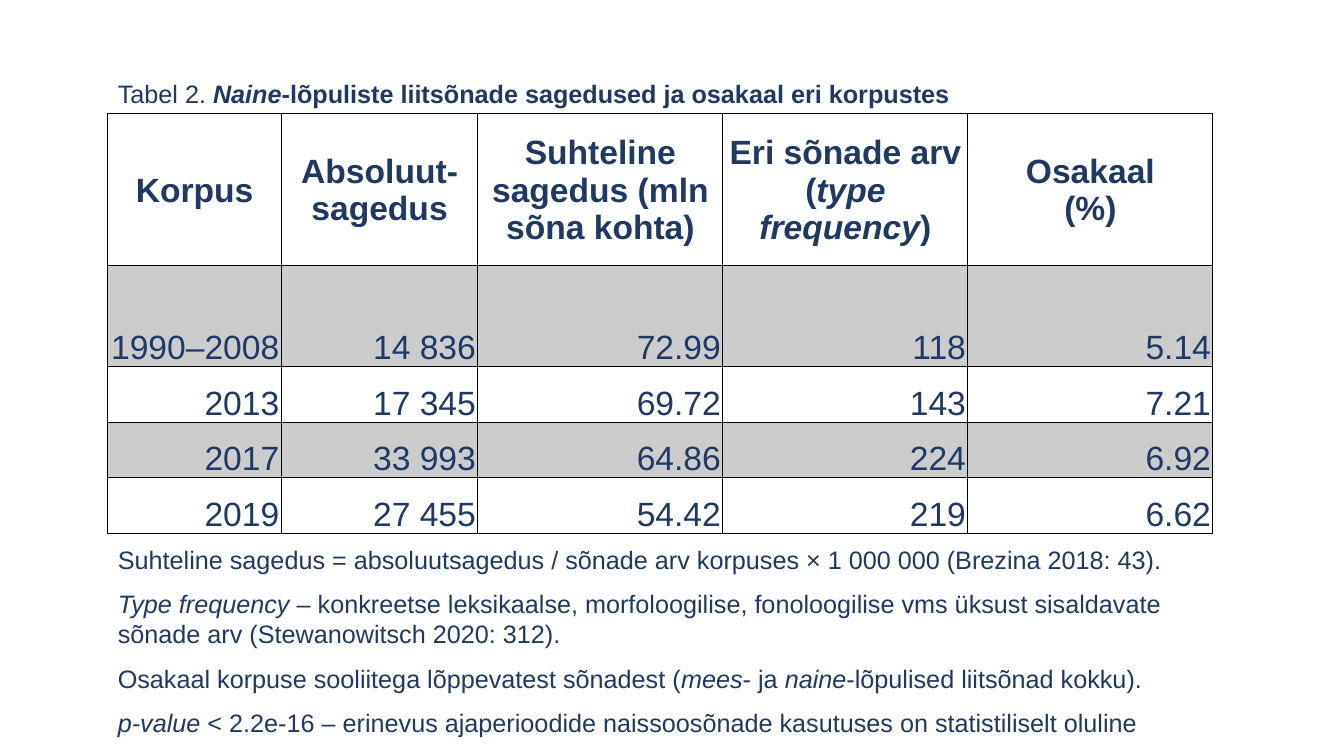
import pptx
import pptx.util
import pptx.dml.color
import pptx.enum.text
import pptx.oxml
import pptx.oxml.ns

Inches = pptx.util.Inches
Pt = pptx.util.Pt
ALIGN = pptx.enum.text.PP_ALIGN
ANCHOR = pptx.enum.text.MSO_ANCHOR

NAVY = pptx.dml.color.RGBColor(0x20, 0x38, 0x64)
BLACK = pptx.dml.color.RGBColor(0, 0, 0)
FONT = "Arial"
BAND_OPACITY = 20000  # thousandths of a percent

# A paragraph is a list of (text, style) runs; style letters are b and i
CAPTION = [[("Tabel 2. ", ""), ("Naine", "bi"),
            ("-lõpuliste liitsõnade sagedused ja osakaal eri korpustes", "b")]]

HEADERS = [
    [[("Korpus", "b")]],
    [[("Absoluut-", "b")], [("sagedus", "b")]],
    [[("Suhteline sagedus (mln sõna kohta)", "b")]],
    [[("Eri sõnade arv", "b")],
     [("(", "b"), ("type frequency", "bi"), (")", "b")]],
    [[("Osakaal", "b")], [("(%)", "b")]],
]
DATA = [
    ["1990–2008", "14 836", "72.99", "118", "5.14"],
    ["2013", "17 345", "69.72", "143", "7.21"],
    ["2017", "33 993", "64.86", "224", "6.92"],
    ["2019", "27 455", "54.42", "219", "6.62"],
]
COL_WIDTHS = [1.72, 1.95, 2.43, 2.43, 2.43]
ROW_HEIGHTS = [1.5, 1.01, 0.55, 0.55, 0.55]

NOTES = [
    [("Suhteline sagedus = absoluutsagedus / sõnade arv korpuses × 1 000 000 "
      "(Brezina 2018: 43).", "")],
    [("Type frequency ", "i"),
     ("– konkreetse leksikaalse, morfoloogilise, fonoloogilise vms üksust "
      "sisaldavate sõnade arv (Stewanowitsch 2020: 312).", "")],
    [("Osakaal korpuse sooliitega lõppevatest sõnadest (", ""), ("mees", "i"),
     ("- ja ", ""), ("naine", "i"), ("-lõpulised liitsõnad kokku).", "")],
    [("p-value", "i"),
     (" < 2.2e-16 – erinevus ajaperioodide naissoosõnade kasutuses on "
      "statistiliselt oluline", "")],
]


def write_paragraphs(tf, paragraphs, size, align=ALIGN.LEFT, gap=0):
    for i, runs in enumerate(paragraphs):
        p = tf.add_paragraph() if i else tf.paragraphs[0]
        p.alignment = align
        if gap and i < len(paragraphs) - 1:
            p.space_after = Pt(gap)
        for text, style in runs:
            r = p.add_run()
            r.text = text
            r.font.name = FONT
            r.font.size = Pt(size)
            r.font.color.rgb = NAVY
            r.font.bold = "b" in style
            r.font.italic = "i" in style


def add_text(s, left, top, width, height, paragraphs, gap=0):
    box = s.shapes.add_textbox(Inches(left), Inches(top),
                               Inches(width), Inches(height))
    tf = box.text_frame
    tf.word_wrap = True
    write_paragraphs(tf, paragraphs, 18, gap=gap)


def add_borders(cell):
    tc_pr = cell._tc.get_or_add_tcPr()
    for i, side in enumerate(("lnL", "lnR", "lnT", "lnB")):
        line = pptx.oxml.parse_xml(
            f'<a:{side} {pptx.oxml.ns.nsdecls("a")} w="{Pt(1)}">'
            f'<a:solidFill><a:srgbClr val="{BLACK}"/></a:solidFill></a:{side}>')
        tc_pr.insert(i, line)


def fill_band(cell):
    cell.fill.solid()
    cell.fill.fore_color.rgb = BLACK
    color = cell._tc.tcPr.find(pptx.oxml.ns.qn("a:solidFill"))[0]
    color.append(pptx.oxml.parse_xml(
        f'<a:alpha {pptx.oxml.ns.nsdecls("a")} val="{BAND_OPACITY}"/>'))


def add_frequency_table(s, left, top):
    rows = [HEADERS] + [[[[(value, "")]] for value in row] for row in DATA]
    table = s.shapes.add_table(
        len(rows), len(COL_WIDTHS), Inches(left), Inches(top),
        Inches(sum(COL_WIDTHS)), Inches(sum(ROW_HEIGHTS))).table
    table.first_row = table.horz_banding = False
    for column, width in zip(table.columns, COL_WIDTHS):
        column.width = Inches(width)
    for r, (row, height) in enumerate(zip(rows, ROW_HEIGHTS)):
        table.rows[r].height = Inches(height)
        for c, paragraphs in enumerate(row):
            cell = table.cell(r, c)
            cell.margin_left = cell.margin_right = Inches(0.02)
            cell.margin_top, cell.margin_bottom = Inches(0.02), 0
            cell.vertical_anchor = ANCHOR.BOTTOM if r else ANCHOR.MIDDLE
            write_paragraphs(cell.text_frame, paragraphs, 24,
                             ALIGN.RIGHT if r else ALIGN.CENTER)
            # Odd rows are shaded
            if r % 2:
                fill_band(cell)
            else:
                cell.fill.background()
            add_borders(cell)


def build_table_slide(prs, left, top):
    s = prs.slides.add_slide(prs.slide_layouts[6])
    # Table, explanatory notes below it, caption above it
    add_frequency_table(s, left, top)
    add_text(s, left, top + 4.22, 11.19, 2.04, NOTES, gap=10)
    add_text(s, left, top - 0.4, 11.34, 0.4, CAPTION)


def main():
    prs = pptx.Presentation()
    prs.slide_width, prs.slide_height = Inches(13.33), Inches(7.5)
    build_table_slide(prs, 1.07, 1.13)
    prs.save("out.pptx")


if __name__ == "__main__":
    main()
